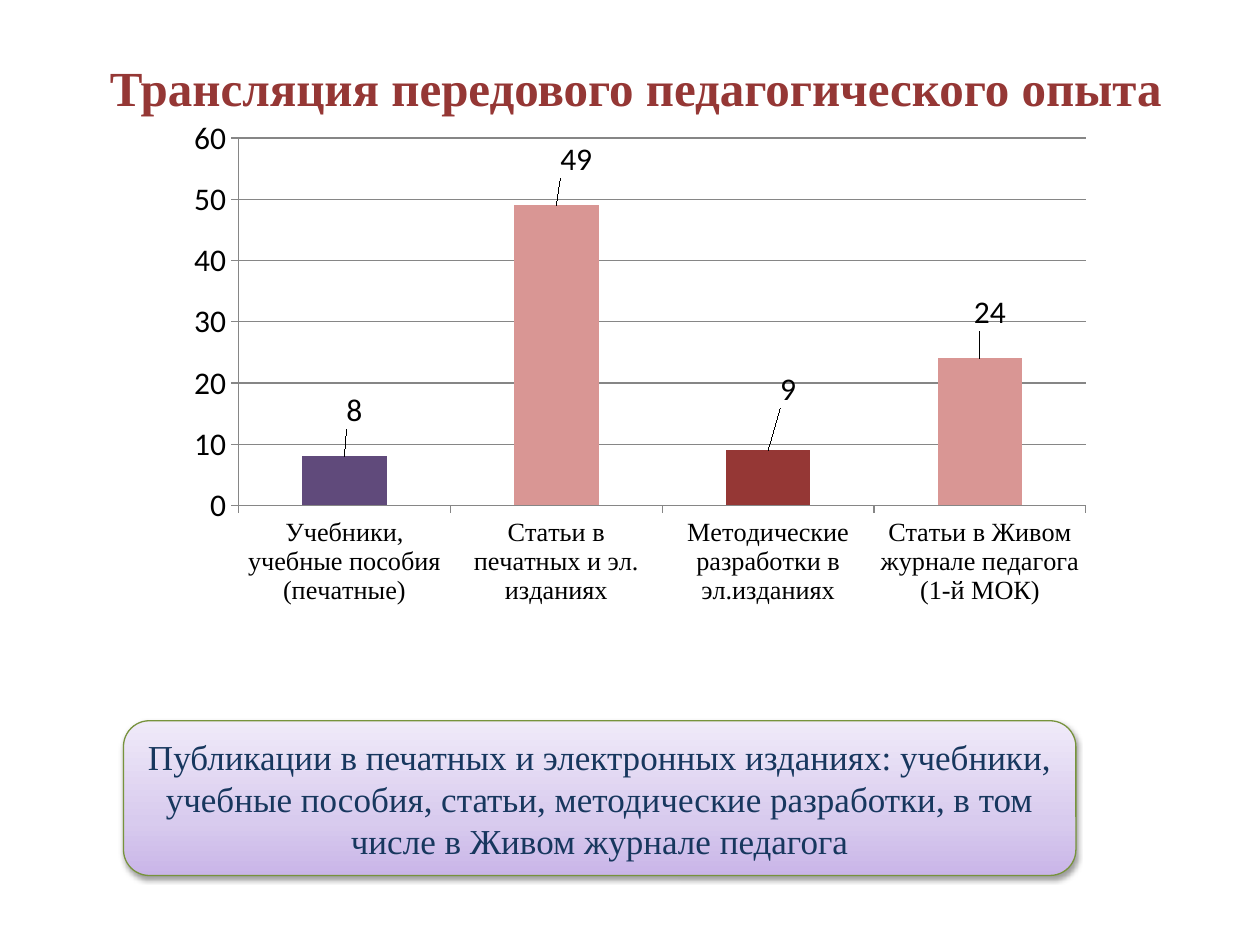
from pptx import Presentation, util as u
from pptx.chart.data import CategoryChartData
from pptx.dml.color import RGBColor
from pptx.enum import chart as ch, shapes, text
from pptx.oxml import parse_xml
from pptx.oxml.ns import nsdecls

SERIF = "Times New Roman"
PUBLICATIONS = {
    "Учебники, учебные пособия (печатные)": 8,
    "Статьи в печатных и эл. изданиях": 49,
    "Методические разработки в эл.изданиях": 9,
    "Статьи в Живом журнале педагога (1-й МОК)": 24,
}
BAR_COLORS = ["604A7B", "D99694", "953735", "D99694"]
LABEL_SHIFTS = [(0.01, -0.03), (0.02, -0.03), (0.02, -0.05), (0.01, -0.03)]


def color(value):
    return RGBColor.from_string(value)


def style_font(font, name, size, fill, bold=False):
    font.name, font.size, font.bold = name, u.Pt(size), bold
    font.color.rgb = color(fill)


def write_centered(shape, words, size, fill, bold=False):
    frame = shape.text_frame
    frame.word_wrap = True
    frame.vertical_anchor = text.MSO_ANCHOR.MIDDLE
    paragraph = frame.paragraphs[0]
    paragraph.alignment = text.PP_ALIGN.CENTER
    run = paragraph.add_run()
    run.text = words
    style_font(run.font, SERIF, size, fill, bold)


def manual_layout(**settings):
    parts = "".join(f'<c:{key} val="{value}"/>' for key, value in settings.items())
    return parse_xml(f'<c:layout {nsdecls("c")}><c:manualLayout>{parts}'
                     '</c:manualLayout></c:layout>')


def add_title(slide, words):
    title = slide.shapes.add_textbox(u.Cm(1.55), u.Cm(0.33), u.Cm(22.53), u.Cm(2.84))
    write_centered(title, words, 28, "953735", bold=True)


def style_axis(axis):
    axis.major_tick_mark = ch.XL_TICK_MARK.OUTSIDE
    axis.minor_tick_mark = ch.XL_TICK_MARK.NONE
    axis.format.line.color.rgb = color("868686")
    axis.format.line.width = u.Pt(0.75)


def place_plot(chart):
    area = chart.plots[0]._element.getparent()
    for layout in area.findall("{*}layout"):
        area.remove(layout)
    area.insert(0, manual_layout(layoutTarget="inner", xMode="edge", yMode="edge",
                                 x=0.117, y=0.142, w=0.844, h=0.496))


def style_bars(series):
    for index, (fill, (dx, dy)) in enumerate(zip(BAR_COLORS, LABEL_SHIFTS)):
        point = series.points[index]
        point.format.fill.solid()
        point.format.fill.fore_color.rgb = color(fill)
        point.data_label.position = ch.XL_LABEL_POSITION.OUTSIDE_END
        label = series._element.xpath(f"c:dLbls/c:dLbl[c:idx/@val={index}]")[0]
        label.insert(1, manual_layout(x=dx, y=dy))
    series.data_labels.show_value = True


def add_publications_chart(slide):
    data = CategoryChartData()
    data.categories = list(PUBLICATIONS)
    data.add_series("Series 1", list(PUBLICATIONS.values()))
    chart = slide.shapes.add_chart(
        ch.XL_CHART_TYPE.COLUMN_CLUSTERED,
        u.Cm(2.44), u.Cm(0.66), u.Cm(20.24), u.Cm(14.94), data).chart
    chart.has_legend = chart.has_title = False
    style_font(chart.font, "Calibri", 18, "000000")
    plot = chart.plots[0]
    plot.gap_width, plot.vary_by_categories = 150, False
    place_plot(chart)
    style_axis(chart.category_axis)
    style_font(chart.category_axis.tick_labels.font, SERIF, 15, "000000")
    counts = chart.value_axis
    style_axis(counts)
    counts.minimum_scale, counts.maximum_scale, counts.major_unit = 0, 60, 10
    counts.has_major_gridlines = True
    counts.major_gridlines.format.line.color.rgb = color("868686")
    counts.major_gridlines.format.line.width = u.Pt(0.75)
    style_bars(plot.series[0])


def fill_gradient(shape, stops, angle):
    marks = "".join(f'<a:gs pos="{place * 1000}"><a:srgbClr val="{fill}"/></a:gs>'
                    for place, fill in stops)
    shape._element.spPr.insert(2, parse_xml(
        f'<a:gradFill {nsdecls("a")} rotWithShape="1"><a:gsLst>{marks}</a:gsLst>'
        f'<a:lin ang="{angle * 60000}" scaled="0"/></a:gradFill>'))


def add_shadow(shape):
    shape.shadow.inherit = False
    effects = shape._element.spPr.xpath("a:effectLst")[0]
    effects.append(parse_xml(
        f'<a:outerShdw {nsdecls("a")} blurRad="40000" dist="20000" dir="5400000" '
        'rotWithShape="0"><a:srgbClr val="000000"><a:alpha val="38000"/></a:srgbClr>'
        '</a:outerShdw>'))


def add_summary(slide, words):
    summary = slide.shapes.add_shape(
        shapes.MSO_SHAPE.ROUNDED_RECTANGLE,
        u.Cm(2.49), u.Cm(14.53), u.Cm(19.2), u.Cm(3.12))
    fill_gradient(summary, [(0, "C9B5E8"), (35, "D8CBEE"), (100, "F0EAF9")], 270)
    summary.line.color.rgb = color("77933C")
    summary.line.width = u.Pt(0.75)
    add_shadow(summary)
    write_centered(summary, words, 20, "17375E")


def main():
    deck = Presentation()
    deck.slide_width, deck.slide_height = u.Cm(25.4), u.Cm(19.05)
    slide = deck.slides.add_slide(deck.slide_layouts[6])
    add_title(slide, "Трансляция передового педагогического опыта")
    add_publications_chart(slide)
    add_summary(slide, "Публикации в печатных и электронных изданиях: учебники, "
                       "учебные пособия, статьи, методические разработки, "
                       "в том числе в Живом журнале педагога")
    deck.save("out.pptx")


if __name__ == "__main__":
    main()
